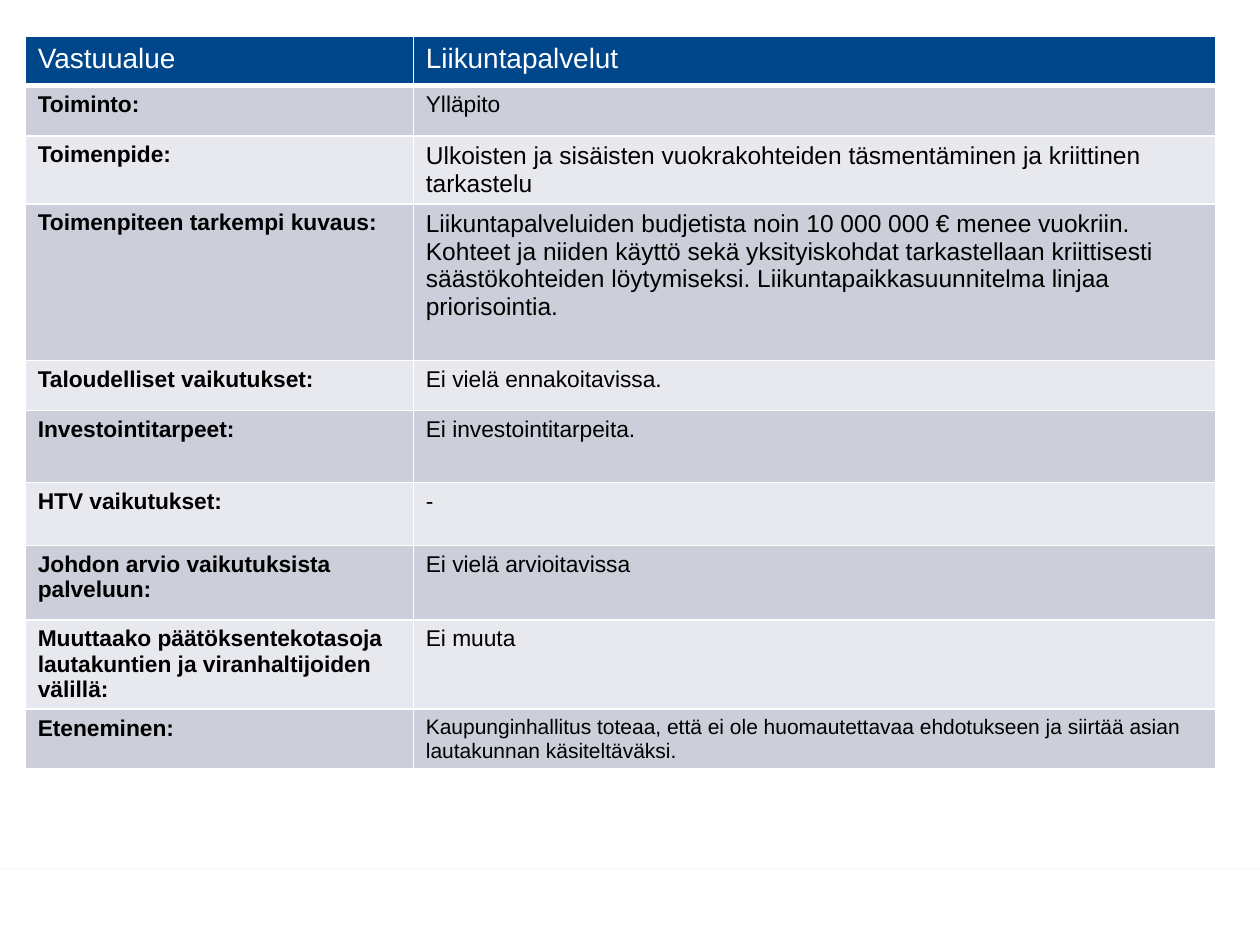
from lxml.etree import SubElement
from pptx import Presentation
from pptx.dml.color import RGBColor
from pptx.enum.shapes import MSO_SHAPE
from pptx.oxml.ns import qn
from pptx.util import Inches, Pt

WIDTH, HEIGHT = 10, 7.5
FONT = "Arial"
WHITE, BLACK, BLUE = "FFFFFF", "000000", "00468B"
BANDS = ["CCCFDA", "E7E9EE"]
COLUMNS = [3.08, 6.37]
ROWS = [
    (0.39, "Vastuualue", "Liikuntapalvelut", 16),
    (0.4, "Toiminto:", "Ylläpito", 13),
    (0.54, "Toimenpide:",
     "Ulkoisten ja sisäisten vuokrakohteiden täsmentäminen ja kriittinen tarkastelu", 14),
    (1.24, "Toimenpiteen tarkempi kuvaus:",
     "Liikuntapalveluiden budjetista noin 10 000 000 € menee vuokriin. Kohteet ja niiden "
     "käyttö sekä yksityiskohdat tarkastellaan kriittisesti säästökohteiden löytymiseksi. "
     "Liikuntapaikkasuunnitelma linjaa priorisointia.", 14),
    (0.4, "Taloudelliset vaikutukset:", "Ei vielä ennakoitavissa.", 13),
    (0.57, "Investointitarpeet:", "Ei investointitarpeita.", 13),
    (0.5, "HTV vaikutukset:", "-", 13),
    (0.59, "Johdon arvio vaikutuksista palveluun:", "Ei vielä arvioitavissa", 13),
    (0.71, "Muuttaako päätöksentekotasoja lautakuntien ja viranhaltijoiden välillä:",
     "Ei muuta", 13),
    (0.46, "Eteneminen:",
     "Kaupunginhallitus toteaa, että ei ole huomautettavaa ehdotukseen ja siirtää asian "
     "lautakunnan käsiteltäväksi.", 12),
]


def rgb(color):
    return RGBColor.from_string(color)


def paint(fill, color):
    fill.solid()
    fill.fore_color.rgb = rgb(color)


def write(tf, text, size=13, color=BLACK, bold=False):
    r = tf.paragraphs[0].add_run()
    r.text = text
    r.font.name = FONT
    r.font.size = Pt(size)
    r.font.bold = bold
    r.font.color.rgb = rgb(color)


def set_borders(cell, color=WHITE, bottom=1):
    tc_pr = cell._tc.get_or_add_tcPr()
    for side, width in zip("LRTB", (1, 1, 1, bottom)):
        ln = SubElement(tc_pr, qn(f"a:ln{side}"), w=str(Pt(width)))
        SubElement(SubElement(ln, qn("a:solidFill")), qn("a:srgbClr"), val=color)


def add_shadow(sp, color, alpha, blur, distance, angle):
    effects = SubElement(sp._element.spPr, qn("a:effectLst"))
    shadow = SubElement(effects, qn("a:outerShdw"), blurRad=str(Pt(blur)),
                        dist=str(Pt(distance)), dir=str(angle * 60000), rotWithShape="0")
    clr = SubElement(shadow, qn("a:srgbClr"), val=color)
    SubElement(clr, qn("a:alpha"), val=str(alpha * 1000))


def add_footer_band(s):
    top = HEIGHT * 0.92
    sp = s.shapes.add_shape(MSO_SHAPE.RECTANGLE, 0, Inches(top),
                            Inches(WIDTH), Inches(HEIGHT - top))
    paint(sp.fill, WHITE)
    sp.line.fill.background()
    add_shadow(sp, BLACK, 35, 3.1, 1.8, 90)


def add_measure_table(s):
    heights = [row[0] for row in ROWS]
    table = s.shapes.add_table(len(ROWS), len(COLUMNS), Inches(0.2), Inches(0.29),
                               Inches(sum(COLUMNS)), Inches(sum(heights))).table
    for column, width in zip(table.columns, COLUMNS):
        column.width = Inches(width)
    for i, (height, label, value, size) in enumerate(ROWS):
        table.rows[i].height = Inches(height)
        header = i == 0
        for j, text in enumerate((label, value)):
            cell = table.cell(i, j)
            set_borders(cell, bottom=3 if header else 1)
            paint(cell.fill, BLUE if header else BANDS[(i - 1) % 2])
            write(cell.text_frame, text,
                  size=size if header or j else 13,
                  color=WHITE if header else BLACK,
                  bold=not header and j == 0)


def main():
    prs = Presentation()
    prs.slide_width, prs.slide_height = Inches(WIDTH), Inches(HEIGHT)
    s = prs.slides.add_slide(prs.slide_layouts[6])
    add_footer_band(s)
    add_measure_table(s)
    prs.save("out.pptx")


if __name__ == "__main__":
    main()
